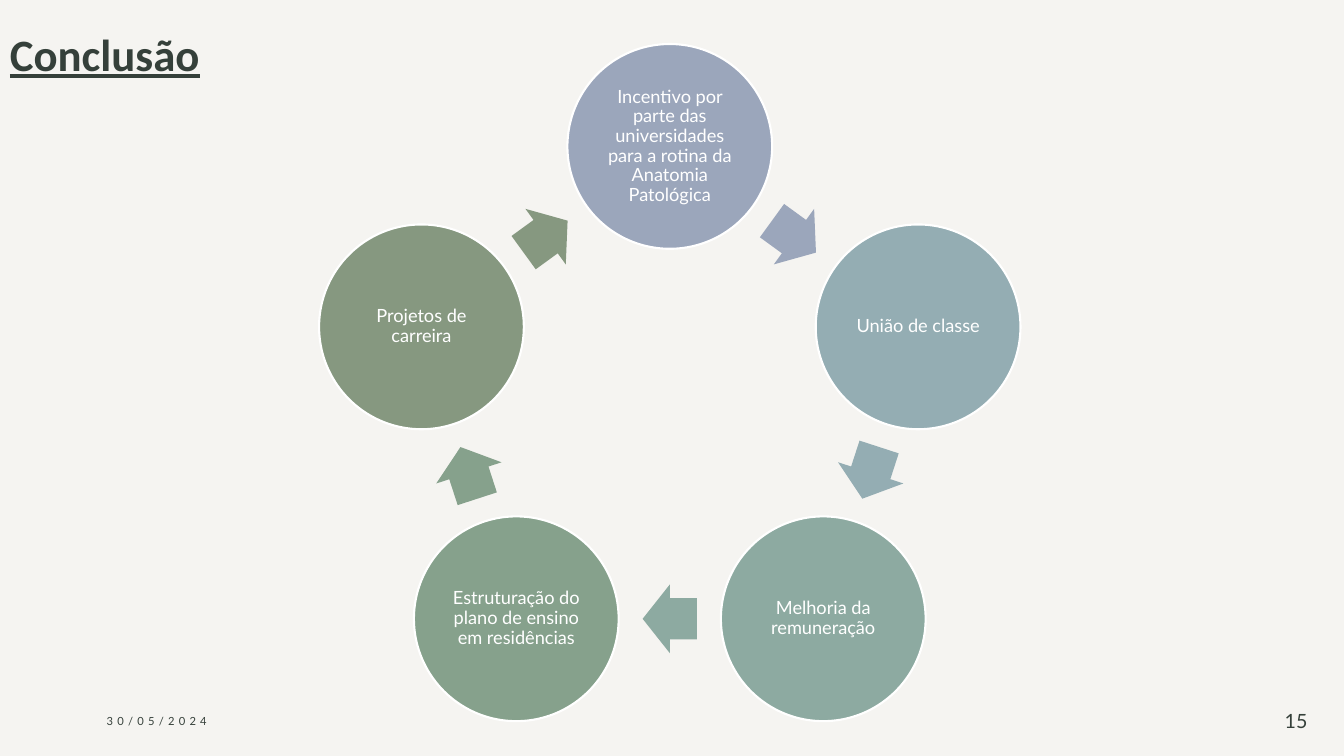
"""Build the conclusion slide: a five-step cycle of circles and arrows."""
import math
from dataclasses import dataclass

import lxml.etree
import pptx
import pptx.dml.color
import pptx.enum.shapes
import pptx.enum.text
import pptx.oxml.ns
import pptx.util
from pptx.util import Cm

RGBColor = pptx.dml.color.RGBColor
SHAPE = pptx.enum.shapes.MSO_SHAPE
ALIGN = pptx.enum.text.PP_ALIGN
ANCHOR = pptx.enum.text.MSO_ANCHOR

WHITE = RGBColor(0xFF, 0xFF, 0xFF)
SAND = RGBColor(0xC0, 0xB7, 0xA5)
DARK = RGBColor(0x35, 0x40, 0x3A)
BLUE = RGBColor(0x9B, 0xA6, 0xBB)
TEAL = RGBColor(0x94, 0xAD, 0xB3)
MINT = RGBColor(0x8D, 0xAA, 0xA1)
GREEN = RGBColor(0x86, 0xA1, 0x8C)
OLIVE = RGBColor(0x86, 0x98, 0x80)

WIDTH, HEIGHT = 33.87, 19.05
CENTER_X, CENTER_Y, RADIUS = 16.88, 10.27, 6.58
CIRCLE = 5.16
ARROW_W, ARROW_H = 1.37, 1.73


@dataclass
class Step:
    text: str
    color: RGBColor


STEPS = [
    Step("Incentivo por parte das universidades para a rotina da Anatomia Patológica", BLUE),
    Step("União de classe", TEAL),
    Step("Melhoria da remuneração", MINT),
    Step("Estruturação do plano de ensino em residências", GREEN),
    Step("Projetos de carreira", OLIVE),
]


def write(sp, text: str, *, size: float, color=DARK, font="Lato", bold=False,
          underline=False, align=ALIGN.LEFT, anchor=ANCHOR.MIDDLE,
          line_spacing=None, inset=None, tracking=0) -> None:
    tf = sp.text_frame
    tf.word_wrap = True
    tf.vertical_anchor = anchor
    if inset is not None:
        tf.margin_left = tf.margin_right = tf.margin_top = tf.margin_bottom = Cm(inset)
    p = tf.paragraphs[0]
    p.alignment = align
    if line_spacing:
        p.line_spacing = line_spacing
    r = p.add_run()
    r.text = text
    r.font.name, r.font.size = font, pptx.util.Pt(size)
    r.font.bold, r.font.underline = bold, underline
    r.font.color.rgb = color
    if tracking:
        r.font._element.set("spc", str(tracking * 100))


def add_text(s, x: float, y: float, w: float, h: float, text: str, **style) -> None:
    write(s.shapes.add_textbox(Cm(x), Cm(y), Cm(w), Cm(h)), text, **style)


def add_filled(s, kind, x: float, y: float, w: float, h: float, color: RGBColor):
    sp = s.shapes.add_shape(kind, Cm(x), Cm(y), Cm(w), Cm(h))
    sp.shadow.inherit = False
    sp.fill.solid()
    sp.fill.fore_color.rgb = color
    sp.line.fill.background()
    return sp


def add_backdrop(s) -> None:
    sp = add_filled(s, SHAPE.RECTANGLE, 0, 0, WIDTH, HEIGHT, SAND)
    qn = pptx.oxml.ns.qn
    fill = sp._element.spPr.find(qn("a:solidFill"))
    lxml.etree.SubElement(fill[0], qn("a:alpha")).set("val", "15000")


def point(angle: float, radius: float) -> tuple[float, float]:
    a = math.radians(angle)
    return CENTER_X + radius * math.sin(a), CENTER_Y - radius * math.cos(a)


def add_circle(s, step: Step, angle: float) -> None:
    x, y = point(angle, RADIUS)
    sp = add_filled(s, SHAPE.OVAL, x - CIRCLE / 2, y - CIRCLE / 2, CIRCLE, CIRCLE, step.color)
    sp.line.color.rgb = WHITE
    sp.line.width = pptx.util.Pt(1.5)
    write(sp, step.text, size=13, color=WHITE, align=ALIGN.CENTER,
          line_spacing=0.9, inset=0.05)


def add_arrow(s, step: Step, angle: float, radius: float) -> None:
    x, y = point(angle, radius)
    sp = add_filled(s, SHAPE.RIGHT_ARROW, x - ARROW_W / 2, y - ARROW_H / 2,
                    ARROW_W, ARROW_H, step.color)
    sp.adjustments[0], sp.adjustments[1] = 0.6, 0.5
    sp.rotation = angle


def add_cycle(s) -> None:
    turn = 360 / len(STEPS)
    arrow_radius = RADIUS * math.cos(math.radians(turn / 2))
    for i, step in enumerate(STEPS):
        add_circle(s, step, i * turn)
        add_arrow(s, step, (i + 0.5) * turn, arrow_radius)


def main() -> None:
    prs = pptx.Presentation()
    prs.slide_width, prs.slide_height = Cm(WIDTH), Cm(HEIGHT)
    s = prs.slides.add_slide(prs.slide_layouts[6])
    add_backdrop(s)
    add_text(s, 0, 0.03, 29.03, 2.13, "Conclusão", size=32, font="Calibri",
             bold=True, underline=True, anchor=ANCHOR.BOTTOM)
    add_cycle(s)
    add_text(s, 2.44, 17.65, 7.62, 1.02, "30/05/2024", size=8, tracking=3)
    add_text(s, 31.75, 17.65, 1.45, 1.02, "15", size=14, align=ALIGN.RIGHT)
    prs.save("out.pptx")


if __name__ == "__main__":
    main()
